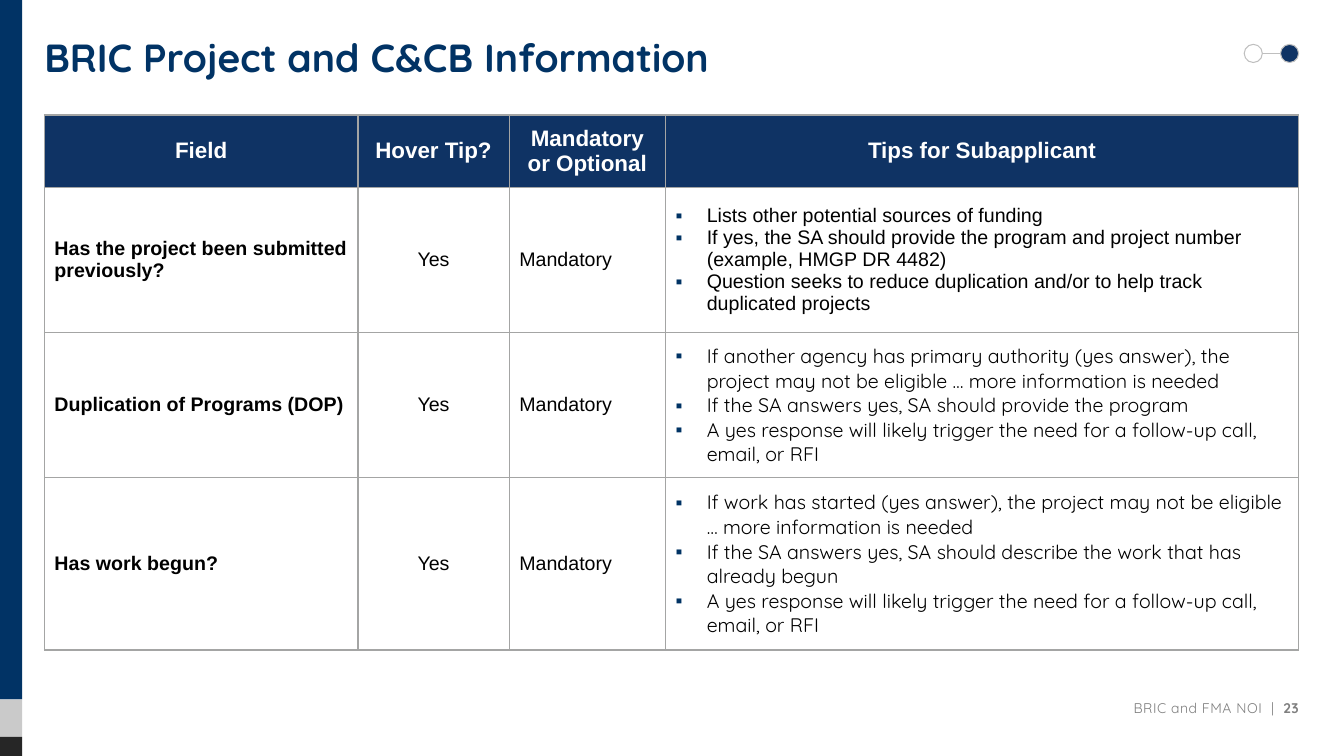
from lxml import etree
from pptx import Presentation
from pptx import util as u
from pptx.dml.color import RGBColor
from pptx.enum import shapes, text
from pptx.oxml import parse_xml
from pptx.oxml.ns import nsdecls, qn

PX = 9144  # 100 px to the inch
COLORS = {
    "stripe": "013365", "silver": "CACACA", "charcoal": "262626",
    "navy": "0F3364", "bullet": "003364", "border": "A4A5A4",
    "ring": "BFBFBF", "footer": "7F7F7F", "white": "FFFFFF", "black": "000000",
}
HEADERS = ["Field", "Hover Tip?", "Mandatory or Optional", "Tips for Subapplicant"]
FOLLOW_UP = "A yes response will likely trigger the need for a follow-up call, email, or RFI"
# Each row: field, font of the tips, tips
FIELDS = [
    ("Has the project been submitted previously?", "Arial", [
        "Lists other potential sources of funding",
        "If yes, the SA should provide the program and project number "
        "(example, HMGP DR 4482)",
        "Question seeks to reduce duplication and/or to help track duplicated projects"]),
    ("Duplication of Programs (DOP)", "Quicksand", [
        "If another agency has primary authority (yes answer), the project may "
        "not be eligible … more information is needed",
        "If the SA answers yes, SA should provide the program",
        FOLLOW_UP]),
    ("Has work begun?", "Quicksand", [
        "If work has started (yes answer), the project may not be eligible "
        "… more information is needed",
        "If the SA answers yes, SA should describe the work that has already begun",
        FOLLOW_UP]),
]
COLUMNS = [311, 150, 155, 628]
ROWS = [72, 144, 144, 171]


def px(*lengths):
    return [u.Emu(length * PX) for length in lengths]


def rgb(name):
    return RGBColor.from_string(COLORS[name])


def set_font(font, name, size, color, bold=False):
    font.name, font.size, font.bold = name, u.Pt(size), bold
    font.color.rgb = rgb(color)


def add_plain_shape(page, kind, box, fill, line=None):
    shape = page.shapes.add_shape(kind, *px(*box))
    shape.shadow.inherit = False
    shape.fill.solid()
    shape.fill.fore_color.rgb = rgb(fill)
    if line:
        shape.line.color.rgb = rgb(line)
        shape.line.width = u.Pt(0.75)
    else:
        shape.line.fill.background()


def add_text_box(page, box, anchor):
    frame = page.shapes.add_textbox(*px(*box)).text_frame
    frame.word_wrap = True
    frame.margin_left = frame.margin_right = 0
    frame.vertical_anchor = anchor
    return frame.paragraphs[0]


def add_side_stripe(page, box):
    left, top, width, height = box
    for color, part in (("stripe", height - 56), ("silver", 37), ("charcoal", 19)):
        add_plain_shape(page, shapes.MSO_SHAPE.RECTANGLE, (left, top, width, part), color)
        top += part


def add_title(page, box):
    para = add_text_box(page, box, text.MSO_ANCHOR.TOP)
    para.text = "BRIC Project and C&CB Information"
    set_font(para.font, "Quicksand", 28, "stripe", True)


def add_progress_dots(page, box):
    left, top, width, size = box
    right, middle = left + width - size, top + size // 2
    line = page.shapes.add_connector(
        shapes.MSO_CONNECTOR.STRAIGHT, *px(left + size, middle, right, middle))
    line.line.color.rgb = rgb("ring")
    line.line.width = u.Pt(0.75)
    etree.SubElement(line._element.spPr, qn("a:effectLst"))
    for x, fill in ((left, "white"), (right, "navy")):
        add_plain_shape(page, shapes.MSO_SHAPE.OVAL, (x, top, size, size), fill, "ring")


def add_bullet(para):
    properties = para._p.get_or_add_pPr()
    indent = 31 * PX
    properties.set("marL", str(indent))
    properties.set("indent", str(-indent))
    for xml in (f'<a:buClr {nsdecls("a")}><a:srgbClr val="{COLORS["bullet"]}"/></a:buClr>',
                f'<a:buFont {nsdecls("a")} typeface="Arial"/>',
                f'<a:buChar {nsdecls("a")} char="▪"/>'):
        properties.append(parse_xml(xml))


def style_cell(cell, fill):
    properties = cell._tc.get_or_add_tcPr()
    for side in "LRTB":
        properties.append(parse_xml(
            f'<a:ln{side} {nsdecls("a")} w="12700"><a:solidFill>'
            f'<a:srgbClr val="{COLORS["border"]}"/></a:solidFill></a:ln{side}>'))
    cell.fill.solid()
    cell.fill.fore_color.rgb = rgb(fill)
    cell.vertical_anchor = text.MSO_ANCHOR.MIDDLE


def fill_cell(cell, lines, font, centered=False, bulleted=False, fill="white"):
    style_cell(cell, fill)
    frame = cell.text_frame
    for index, line in enumerate(lines):
        para = frame.add_paragraph() if index else frame.paragraphs[0]
        para.text = line
        para.alignment = text.PP_ALIGN.CENTER if centered else text.PP_ALIGN.LEFT
        if bulleted:
            add_bullet(para)
        set_font(para.font, *font)


def add_field_table(page, box):
    table = page.shapes.add_table(len(ROWS), len(COLUMNS), *px(*box)).table
    table.first_row = table.horz_banding = False
    for column, width in zip(table.columns, px(*COLUMNS)):
        column.width = width
    for row, height in zip(table.rows, px(*ROWS)):
        row.height = height
    for column, header in enumerate(HEADERS):
        fill_cell(table.cell(0, column), [header], ("Arial", 16, "white", True),
                  centered=True, fill="navy")
    body = ("Arial", 14, "black")
    for row, (field, tip_font, tips) in enumerate(FIELDS, 1):
        fill_cell(table.cell(row, 0), [field], (*body, True))
        fill_cell(table.cell(row, 1), ["Yes"], body, centered=True)
        fill_cell(table.cell(row, 2), ["Mandatory"], body)
        fill_cell(table.cell(row, 3), tips, (tip_font, 14, "black"), bulleted=True)


def add_footer(page, box):
    para = add_text_box(page, box, text.MSO_ANCHOR.MIDDLE)
    para.alignment = text.PP_ALIGN.RIGHT
    set_font(para.font, "Quicksand", 10, "footer")
    for words, bold in (("BRIC and FMA NOI  |  ", False), ("23", True)):
        span = para.add_run()
        span.text = words
        span.font.bold = bold
        span._r.get_or_add_rPr().set("spc", "40")


def main():
    deck = Presentation()
    deck.slide_width, deck.slide_height = px(1333, 750)
    page = deck.slides.add_slide(deck.slide_layouts[6])
    add_side_stripe(page, (0, 0, 22, 750))
    add_title(page, (44, 28, 1243, 84))
    add_field_table(page, (44, 114, sum(COLUMNS), sum(ROWS)))
    add_footer(page, (479, 688, 809, 29))
    add_progress_dots(page, (1234, 44, 54, 18))
    deck.save("out.pptx")


if __name__ == "__main__":
    main()
